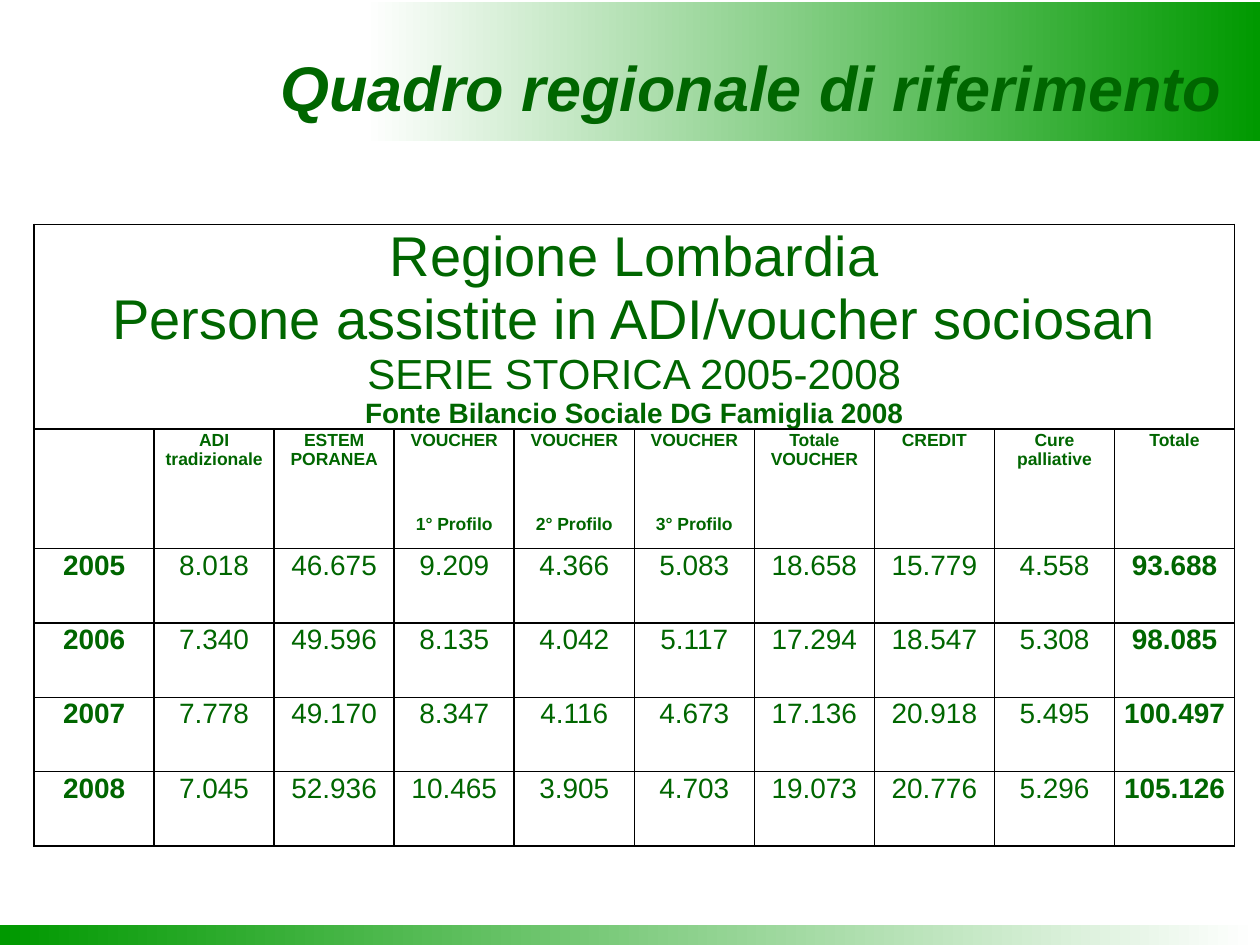
"""Build the slide on home-care recipients in Lombardy, 2005-2008."""
from dataclasses import dataclass

from lxml import etree
from pptx import Presentation
from pptx.dml.color import RGBColor
from pptx.enum.shapes import MSO_SHAPE
from pptx.enum.text import MSO_ANCHOR, MSO_AUTO_SIZE, PP_ALIGN
from pptx.oxml.ns import qn
from pptx.util import Inches, Pt

RECT = MSO_SHAPE.RECTANGLE
TOP, MIDDLE, BOTTOM = MSO_ANCHOR.TOP, MSO_ANCHOR.MIDDLE, MSO_ANCHOR.BOTTOM
CENTER, RIGHT = PP_ALIGN.CENTER, PP_ALIGN.RIGHT
NO_AUTOFIT = MSO_AUTO_SIZE.NONE

WHITE = RGBColor(0xFF, 0xFF, 0xFF)
GREEN = RGBColor(0x00, 0x99, 0x00)
DARK_GREEN = RGBColor(0x00, 0x66, 0x00)
BLACK = RGBColor(0x00, 0x00, 0x00)
FONT = "Arial"
TITLE_ONLY = 5


@dataclass
class Line:
    text: str
    size: int
    bold: bool = False
    italic: bool = False


@dataclass
class Bar:
    left: float
    top: float
    width: float
    height: float
    rotation: int = 0


BARS = [Bar(2.89, 0.02, 7.11, 1.1), Bar(0, 7.34, 9.98, 0.16, 180)]
TITLE = Line("Quadro regionale di riferimento", 36, True, True)
HEADING = [
    Line("Regione Lombardia", 32),
    Line("Persone assistite in ADI/voucher sociosan", 32),
    Line("SERIE STORICA 2005-2008", 24),
    Line("Fonte Bilancio Sociale DG Famiglia 2008", 16, True),
]
HEADERS = ["", "ADI tradizionale", "ESTEM PORANEA", "VOUCHER", "VOUCHER", "VOUCHER",
           "Totale VOUCHER", "CREDIT", "Cure palliative", "Totale"]
PROFILES = {3: "1° Profilo", 4: "2° Profilo", 5: "3° Profilo"}
DATA = [
    ["2005", "8.018", "46.675", "9.209", "4.366", "5.083", "18.658", "15.779", "4.558", "93.688"],
    ["2006", "7.340", "49.596", "8.135", "4.042", "5.117", "17.294", "18.547", "5.308", "98.085"],
    ["2007", "7.778", "49.170", "8.347", "4.116", "4.673", "17.136", "20.918", "5.495", "100.497"],
    ["2008", "7.045", "52.936", "10.465", "3.905", "4.703", "19.073", "20.776", "5.296", "105.126"],
]
ROW_HEIGHTS = [1.5, 0.67, 0.28] + [0.59] * len(DATA)
TABLE_WIDTH = 9.53
LAST = len(HEADERS) - 1


def write(tf, lines: list[Line], align) -> None:
    for i, line in enumerate(lines):
        p = tf.add_paragraph() if i else tf.paragraphs[0]
        p.alignment = align
        r = p.add_run()
        r.text = line.text
        r.font.name = FONT
        r.font.size = Pt(line.size)
        r.font.bold = line.bold
        r.font.italic = line.italic
        r.font.color.rgb = DARK_GREEN


def add_bar(slide, bar: Bar, index: int) -> None:
    s = slide.shapes.add_shape(RECT, Inches(bar.left), Inches(bar.top),
                               Inches(bar.width), Inches(bar.height))
    s.rotation = bar.rotation
    s.shadow.inherit = False
    s.line.fill.background()
    s.fill.gradient()
    s.fill.gradient_angle = 0
    for stop, color in zip(s.fill.gradient_stops, (WHITE, GREEN)):
        stop.color.rgb = color
    slide.shapes._spTree.insert(2 + index, s._element)


def add_title(slide) -> None:
    s = slide.shapes.title
    s.left, s.top, s.width, s.height = Inches(0.5), Inches(0.3), Inches(9.3), Inches(0.77)
    tf = s.text_frame
    tf.auto_size = NO_AUTOFIT
    tf.vertical_anchor = MIDDLE
    write(tf, [TITLE], RIGHT)


def style_cell(cell, hidden: str) -> None:
    cell.margin_left = cell.margin_top = cell.margin_right = Inches(0.01)
    cell.margin_bottom = 0
    tc_pr = cell._tc.get_or_add_tcPr()
    for side in "LRTB":
        ln = etree.SubElement(tc_pr, qn(f"a:ln{side}"), w=str(Pt(1)))
        if side == hidden:
            etree.SubElement(ln, qn("a:noFill"))
        else:
            fill = etree.SubElement(ln, qn("a:solidFill"))
            etree.SubElement(fill, qn("a:srgbClr"), val=str(BLACK))
    cell.fill.background()


def fill_cell(cell, lines: list[Line], anchor=TOP) -> None:
    cell.vertical_anchor = anchor
    write(cell.text_frame, lines, CENTER)


def add_table(slide) -> None:
    table = slide.shapes.add_table(len(ROW_HEIGHTS), len(HEADERS), Inches(0.27), Inches(1.78),
                                   Inches(TABLE_WIDTH), Inches(sum(ROW_HEIGHTS))).table
    table.first_row = table.horz_banding = False
    for col in table.columns:
        col.width = Inches(TABLE_WIDTH / len(HEADERS))
    for i, height in enumerate(ROW_HEIGHTS):
        table.rows[i].height = Inches(height)
        for j in range(len(HEADERS)):
            hidden = {1: "B", 2: "T"}.get(i, "") if j in PROFILES else ""
            style_cell(table.cell(i, j), hidden)

    table.cell(0, 0).merge(table.cell(0, LAST))
    fill_cell(table.cell(0, 0), HEADING, BOTTOM)
    for j, header in enumerate(HEADERS):
        if j in PROFILES:
            fill_cell(table.cell(2, j), [Line(PROFILES[j], 10, True)])
        else:
            table.cell(1, j).merge(table.cell(2, j))
        if header:
            fill_cell(table.cell(1, j), [Line(header, 10, True)])
    for i, values in enumerate(DATA, 3):
        for j, value in enumerate(values):
            fill_cell(table.cell(i, j), [Line(value, 16, j in (0, LAST))])


def main() -> None:
    prs = Presentation()
    prs.slide_width, prs.slide_height = Inches(10), Inches(7.5)
    slide = prs.slides.add_slide(prs.slide_layouts[TITLE_ONLY])
    for i, bar in enumerate(BARS):
        add_bar(slide, bar, i)
    add_title(slide)
    add_table(slide)
    prs.save("out.pptx")


if __name__ == "__main__":
    main()
